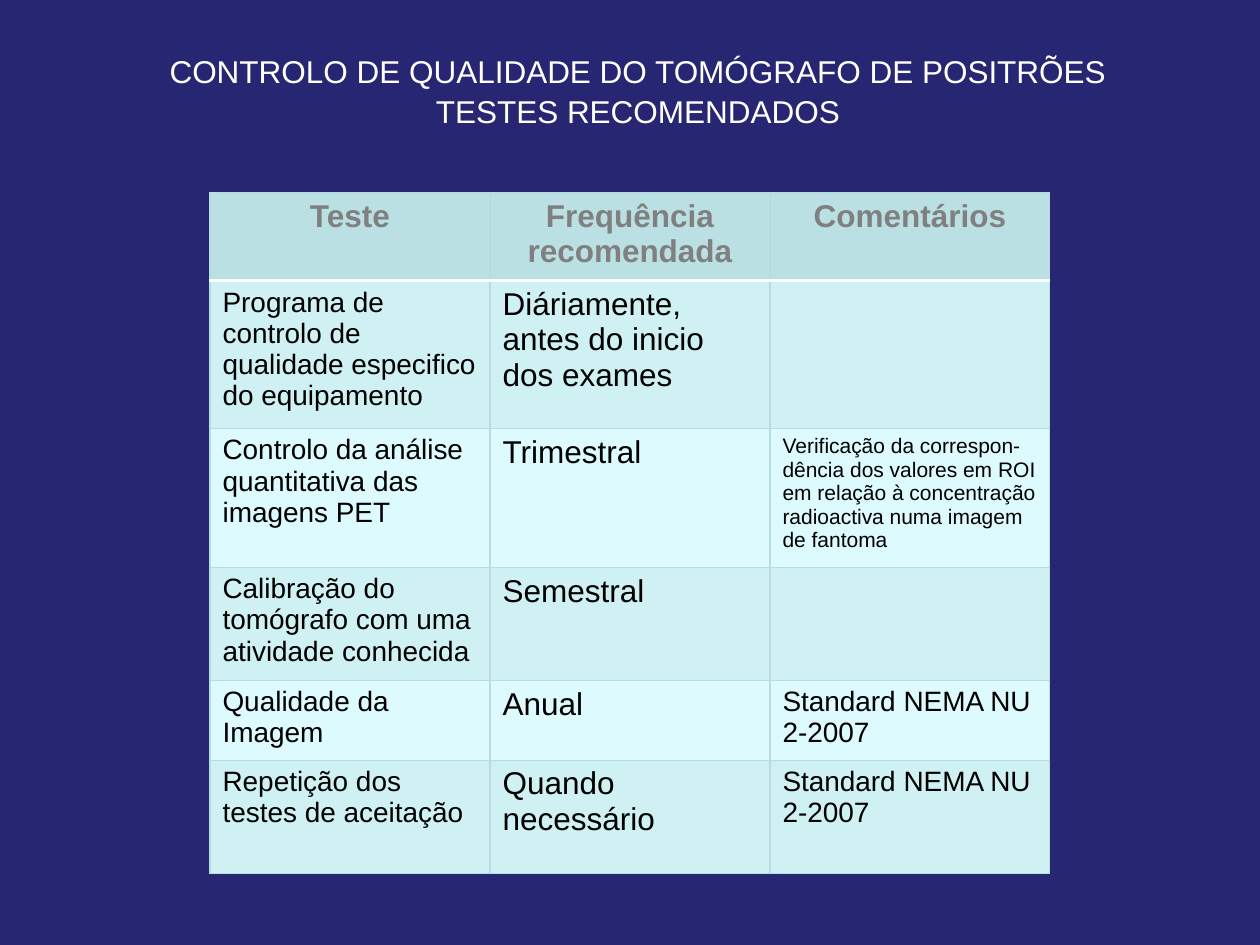
import dataclasses

import lxml.etree
import pptx
import pptx.dml.color
import pptx.enum.text
import pptx.oxml.ns
import pptx.util

Pt = pptx.util.Pt
ALIGN = pptx.enum.text.PP_ALIGN


@dataclasses.dataclass(frozen=True)
class Theme:
    font: str = "Arial"
    background: str = "262673"
    white: str = "FFFFFF"
    header_fill: str = "BBE0E3"
    header_text: str = "808080"
    band_fills: tuple = ("CFF1F3", "DDFBFF")
    body_text: str = "000000"
    border: str = "B6DCDF"
    large: int = 18
    medium: int = 16
    small: int = 12


theme = Theme()


def add_text(paragraph, text, size, color, bold=False):
    run = paragraph.add_run()
    run.text = text
    run.font.name = theme.font
    run.font.size = Pt(size)
    run.font.bold = bold
    run.font.color.rgb = pptx.dml.color.RGBColor.from_string(color)


def set_border(cell, index, side, color, width):
    """Put the border at its place before the fill, as the schema orders them."""
    qn = pptx.oxml.ns.qn
    line = lxml.etree.Element(qn(f"a:ln{side}"), w=str(Pt(width)))
    solid = lxml.etree.SubElement(line, qn("a:solidFill"))
    lxml.etree.SubElement(solid, qn("a:srgbClr"), val=color)
    cell._tc.get_or_add_tcPr().insert(index, line)


presentation = pptx.Presentation()
presentation.slide_width = Pt(720)
presentation.slide_height = Pt(540)
slide = presentation.slides.add_slide(presentation.slide_layouts[5])
slide.background.fill.solid()
slide.background.fill.fore_color.rgb = pptx.dml.color.RGBColor.from_string(theme.background)

# Title
title = slide.shapes.title
title.left, title.top, title.width, title.height = Pt(87.1), Pt(25.9), Pt(555), Pt(51)
frame = title.text_frame
frame.word_wrap = False
frame.auto_size = pptx.enum.text.MSO_AUTO_SIZE.NONE
frame.vertical_anchor = pptx.enum.text.MSO_ANCHOR.MIDDLE
title_lines = ("CONTROLO DE QUALIDADE DO TOMÓGRAFO DE POSITRÕES", "TESTES RECOMENDADOS")
for number, line in enumerate(title_lines):
    paragraph = frame.paragraphs[0] if number == 0 else frame.add_paragraph()
    paragraph.alignment = ALIGN.CENTER
    paragraph.line_spacing = 1.05
    add_text(paragraph, line, theme.large, theme.white)

# Table of recommended tests
rows = (
    ("Teste", "Frequência recomendada", "Comentários"),
    ("Programa de controlo de qualidade especifico do equipamento",
     "Diáriamente, antes do inicio dos exames", ""),
    ("Controlo da análise quantitativa das imagens PET", "Trimestral",
     "Verificação da correspon-dência dos valores em ROI em relação à "
     "concentração radioactiva numa imagem de fantoma"),
    ("Calibração do tomógrafo com uma atividade conhecida", "Semestral", ""),
    ("Qualidade da Imagem", "Anual", "Standard NEMA NU 2-2007"),
    ("Repetição dos testes de aceitação", "Quando necessário", "Standard NEMA NU 2-2007"),
)
row_heights = (50.4, 84.4, 79.4, 64.6, 45.6, 64.6)
column_sizes = (theme.medium, theme.large, theme.medium)
long_comment_row = 2

table = slide.shapes.add_table(
    len(rows), 3, Pt(120), Pt(110), Pt(480), Pt(sum(row_heights))).table
for column in table.columns:
    column.width = Pt(160)

for r, (texts, height) in enumerate(zip(rows, row_heights)):
    table.rows[r].height = Pt(height)
    is_header = r == 0
    fill = theme.header_fill if is_header else theme.band_fills[(r - 1) % 2]
    for c, text in enumerate(texts):
        cell = table.cell(r, c)
        cell.fill.solid()
        cell.fill.fore_color.rgb = pptx.dml.color.RGBColor.from_string(fill)
        for index, side in enumerate("LRTB"):
            under_header = (r, side) in ((0, "B"), (1, "T"))
            color, width = (theme.white, 2) if under_header else (theme.border, 0.75)
            set_border(cell, index, side, color, width)
        if not text:
            continue
        paragraph = cell.text_frame.paragraphs[0]
        if is_header:
            paragraph.alignment = ALIGN.CENTER
            add_text(paragraph, text, theme.large, theme.header_text, bold=True)
        else:
            is_long_comment = (r, c) == (long_comment_row, 2)
            size = theme.small if is_long_comment else column_sizes[c]
            add_text(paragraph, text, size, theme.body_text)

presentation.save("out.pptx")
